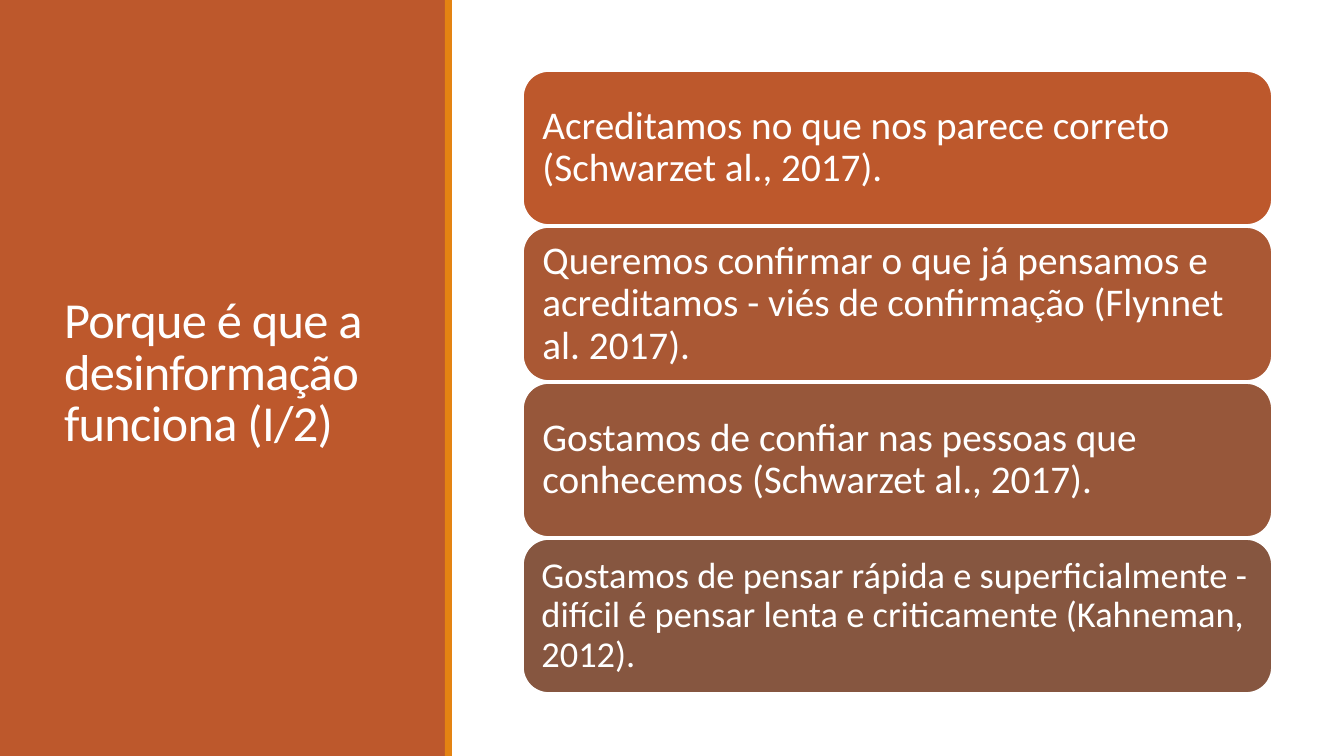
"""Builds the slide on why disinformation works."""
from dataclasses import dataclass

from pptx import Presentation
from pptx.dml.color import RGBColor
from pptx.enum import shapes, text
from pptx.util import Emu, Pt

PX = 12192000 / 1344
WIDTH, HEIGHT = 1344, 756
WHITE, RUST, ORANGE = "FFFFFF", "BD582C", "E48312"
REASON_LEFT, REASON_TOP, REASON_WIDTH, REASON_HEIGHT = 523, 71, 749, 154
REASON_PITCH = 156


@dataclass
class Reason:
    wording: str
    fill: str
    size: int = 28
    inset: int = 12


@dataclass
class Band:
    left: int
    width: int
    fill: str


BANDS = [Band(0, 446, RUST), Band(445, 7, ORANGE)]
REASONS = [
    Reason("Acreditamos no que nos parece correto (Schwarzet al., 2017).", RUST),
    Reason("Queremos confirmar o que já pensamos e acreditamos - viés de "
           "confirmação (Flynnet al. 2017).", "AA5834"),
    Reason("Gostamos de confiar nas pessoas que conhecemos "
           "(Schwarzet al., 2017).", "97573A"),
    Reason("Gostamos de pensar rápida e superficialmente - difícil é pensar "
           "lenta e criticamente (Kahneman, 2012).", "865640", 26, 11),
]


def px(length: int) -> Emu:
    return Emu(round(length * PX))


def color(value: str) -> RGBColor:
    return RGBColor.from_string(value)


def write(shape, wording: str, size: int, spacing: float, inset: int):
    frame = shape.text_frame
    frame.text = wording
    frame.word_wrap = True
    frame.vertical_anchor = text.MSO_ANCHOR.MIDDLE
    frame.margin_left = frame.margin_right = px(inset)
    frame.margin_top = frame.margin_bottom = px(inset)
    paragraph = frame.paragraphs[0]
    paragraph.alignment = text.PP_ALIGN.LEFT
    paragraph.line_spacing = spacing
    run = paragraph.runs[0]
    run.font.name = "Calibri"
    run.font.size = Pt(size)
    run.font.color.rgb = color(WHITE)
    return run


def add_filled(slide, kind, left: int, top: int, width: int, height: int, fill: str):
    shape = slide.shapes.add_shape(kind, px(left), px(top), px(width), px(height))
    shape.shadow.inherit = False
    shape.fill.solid()
    shape.fill.fore_color.rgb = color(fill)
    shape.line.fill.background()
    return shape


def add_band(slide, band: Band) -> None:
    add_filled(slide, shapes.MSO_SHAPE.RECTANGLE, band.left, 0, band.width, HEIGHT, band.fill)


def add_title(slide) -> None:
    title = slide.shapes.add_textbox(px(54), px(57), px(340), px(636))
    run = write(title, "Porque é que a desinformação funciona (I/2)", 36, 0.85, 10)
    run.font._element.set("spc", "-50")


def add_reason(slide, reason: Reason, top: int) -> None:
    card = add_filled(slide, shapes.MSO_SHAPE.ROUNDED_RECTANGLE, REASON_LEFT, top,
                      REASON_WIDTH, REASON_HEIGHT, reason.fill)
    card.line.color.rgb = color(WHITE)
    card.line.width = Pt(1.25)
    write(card, reason.wording, reason.size, 0.9, reason.inset)


def main() -> None:
    deck = Presentation()
    deck.slide_width, deck.slide_height = px(WIDTH), px(HEIGHT)
    slide = deck.slides.add_slide(deck.slide_layouts[6])
    for band in BANDS:
        add_band(slide, band)
    add_title(slide)
    for index, reason in enumerate(REASONS):
        add_reason(slide, reason, REASON_TOP + index * REASON_PITCH)
    deck.save("out.pptx")


if __name__ == "__main__":
    main()
